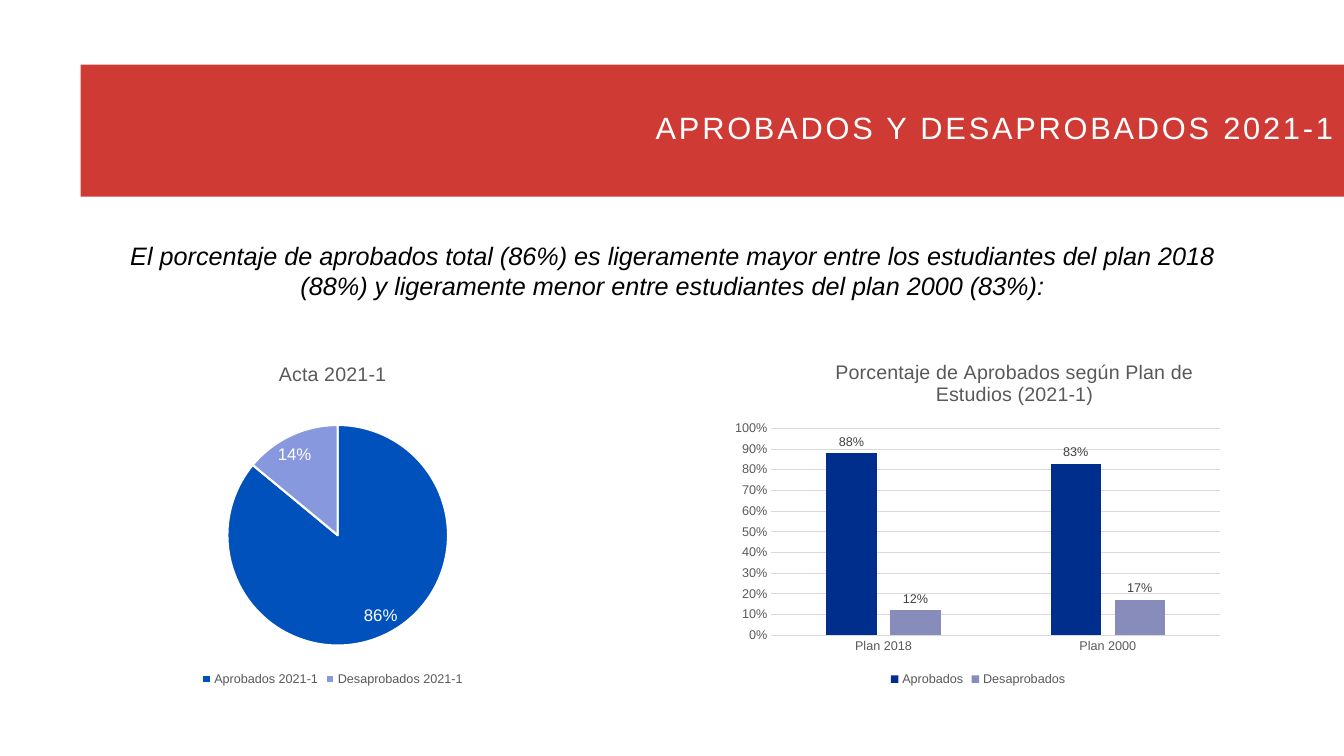
from lxml import etree
from pptx import Presentation
from pptx.chart.data import CategoryChartData
from pptx.dml.color import RGBColor
from pptx.enum.chart import XL_CHART_TYPE, XL_LABEL_POSITION, XL_LEGEND_POSITION, XL_TICK_MARK
from pptx.enum.text import MSO_ANCHOR, MSO_AUTO_SIZE, PP_ALIGN
from pptx.oxml.ns import qn
from pptx.util import Inches, Pt

PIE = XL_CHART_TYPE.PIE
COLUMNS = XL_CHART_TYPE.COLUMN_CLUSTERED
BEST_FIT = XL_LABEL_POSITION.BEST_FIT
OUTSIDE_END = XL_LABEL_POSITION.OUTSIDE_END
LEGEND_BOTTOM = XL_LEGEND_POSITION.BOTTOM
NO_TICK = XL_TICK_MARK.NONE
MIDDLE = MSO_ANCHOR.MIDDLE
NO_FIT = MSO_AUTO_SIZE.NONE
GROW = MSO_AUTO_SIZE.SHAPE_TO_FIT_TEXT
RIGHT = PP_ALIGN.RIGHT
CENTER = PP_ALIGN.CENTER

FONT = "Arial"
WHITE = RGBColor(0xFF, 0xFF, 0xFF)
BLACK = RGBColor(0x00, 0x00, 0x00)
BANNER_RED = RGBColor(0xCF, 0x3A, 0x34)
AXIS_GRAY = RGBColor(0x59, 0x59, 0x59)
LABEL_GRAY = RGBColor(0x40, 0x40, 0x40)
GRID_GRAY = RGBColor(0xD9, 0xD9, 0xD9)
PIE_COLORS = (RGBColor(0x00, 0x51, 0xBC), RGBColor(0x87, 0x98, 0xDE))
PLAN_COLORS = (RGBColor(0x00, 0x2E, 0x8D), RGBColor(0x87, 0x8C, 0xBB))


def set_font(font, size, color):
    font.name = FONT
    font.size = Pt(size)
    font.color.rgb = color


def add_run(paragraph, text, size, color):
    run = paragraph.add_run()
    run.text = text
    set_font(run.font, size, color)
    return run


def set_layout(parent, index, **fractions):
    """Place a chart part by fractions of the chart's width and height."""
    layout = parent.find(qn("c:layout"))
    if layout is None:
        layout = etree.Element(qn("c:layout"))
        parent.insert(index, layout)
    manual = etree.SubElement(layout, qn("c:manualLayout"))
    if "w" in fractions:
        etree.SubElement(manual, qn("c:layoutTarget")).set("val", "inner")
    for side in ("x", "y"):
        etree.SubElement(manual, qn(f"c:{side}Mode")).set("val", "edge")
    for side, fraction in fractions.items():
        etree.SubElement(manual, qn(f"c:{side}")).set("val", str(fraction))


def add_banner_title(slide, text):
    title = slide.shapes.title
    title.left, title.top = Inches(0.8), Inches(0.64)
    title.width, title.height = Inches(12.53), Inches(1.31)
    title.fill.solid()
    title.fill.fore_color.rgb = BANNER_RED
    frame = title.text_frame
    frame.auto_size = NO_FIT
    frame.vertical_anchor = MIDDLE
    paragraph = frame.paragraphs[0]
    paragraph.alignment = RIGHT
    paragraph.line_spacing = 0.8
    run = add_run(paragraph, text, 22, WHITE)
    run.font._element.set("spc", "200")


def add_summary(slide, text):
    summary = slide.shapes.add_textbox(Inches(1.14), Inches(2.33), Inches(11.06), Inches(0.71))
    frame = summary.text_frame
    frame.word_wrap = True
    frame.auto_size = GROW
    paragraph = frame.paragraphs[0]
    paragraph.alignment = CENTER
    add_run(paragraph, text, 18, BLACK).font.italic = True


def add_percent_chart(slide, kind, left, heading, categories, series):
    """Add a chart with its heading and a legend at the bottom."""
    values = CategoryChartData(number_format="0%")
    values.categories = categories
    for name, shares in series.items():
        values.add_series(name, shares)
    chart = slide.shapes.add_chart(
        kind, Inches(left), Inches(3.43), Inches(5), Inches(3.42), values).chart
    set_font(chart.font, 10, BLACK)
    chart.has_title = True
    add_run(chart.chart_title.text_frame.paragraphs[0], heading, 14, AXIS_GRAY).font.bold = False
    chart.chart_title.include_in_layout = False
    chart.has_legend = True
    chart.legend.position = LEGEND_BOTTOM
    chart.legend.include_in_layout = False
    set_font(chart.legend.font, 9, AXIS_GRAY)
    return chart


def show_values(plot, size, color, position):
    plot.has_data_labels = True
    labels = plot.data_labels
    labels.show_value = True
    labels.show_percentage = False
    labels.number_format = "0%"
    labels.number_format_is_linked = False
    labels.position = position
    set_font(labels.font, size, color)


def add_total_pie(slide):
    chart = add_percent_chart(
        slide, PIE, 0.8, "Acta 2021-1",
        ("Aprobados 2021-1", "Desaprobados 2021-1"), {"Series 1": (0.86, 0.14)})
    plot = chart.plots[0]
    plot.vary_by_categories = True
    for index, color in enumerate(PIE_COLORS):
        slice_format = plot.series[0].points[index].format
        slice_format.fill.solid()
        slice_format.fill.fore_color.rgb = color
        slice_format.line.color.rgb = WHITE
        slice_format.line.width = Pt(1.5)
    show_values(plot, 12, WHITE, BEST_FIT)
    set_layout(chart._chartSpace.chart.plotArea, 0, x=0.29, y=0.23, w=0.44, h=0.64)


def style_axis(axis):
    axis.major_tick_mark = NO_TICK
    axis.minor_tick_mark = NO_TICK
    set_font(axis.tick_labels.font, 9, AXIS_GRAY)


def set_line(line):
    line.color.rgb = GRID_GRAY
    line.width = Pt(0.75)


def add_plan_columns(slide):
    chart = add_percent_chart(
        slide, COLUMNS, 7.2, "Porcentaje de Aprobados según Plan de Estudios (2021-1)",
        ("Plan 2018", "Plan 2000"),
        {"Aprobados": (0.88, 0.83), "Desaprobados": (0.12, 0.17)})
    plot = chart.plots[0]
    plot.vary_by_categories = False
    plot.gap_width = 219
    plot.overlap = -27
    for series, color in zip(plot.series, PLAN_COLORS):
        series.format.fill.solid()
        series.format.fill.fore_color.rgb = color
    show_values(plot, 9, LABEL_GRAY, OUTSIDE_END)

    plans, percent = chart.category_axis, chart.value_axis
    style_axis(plans)
    style_axis(percent)
    set_line(plans.format.line)
    percent.format.line.fill.background()
    set_line(percent.major_gridlines.format.line)
    percent.minimum_scale, percent.maximum_scale, percent.major_unit = 0, 1, 0.1
    percent.tick_labels.number_format = "0%"
    percent.tick_labels.number_format_is_linked = False
    set_layout(chart.chart_title._element, 1, x=0.21, y=0.03)
    set_layout(chart._chartSpace.chart.plotArea, 0, x=0.09, y=0.24, w=0.89, h=0.6)


def main():
    deck = Presentation()
    deck.slide_width, deck.slide_height = Inches(13.33), Inches(7.5)
    slide = deck.slides.add_slide(deck.slide_layouts[5])
    add_banner_title(slide, "APROBADOS Y DESAPROBADOS 2021-1")
    add_total_pie(slide)
    add_plan_columns(slide)
    add_summary(
        slide,
        "El porcentaje de aprobados total (86%) es ligeramente mayor entre los estudiantes "
        "del plan 2018 (88%) y ligeramente menor entre estudiantes del plan 2000 (83%):")
    deck.save("out.pptx")


if __name__ == "__main__":
    main()
